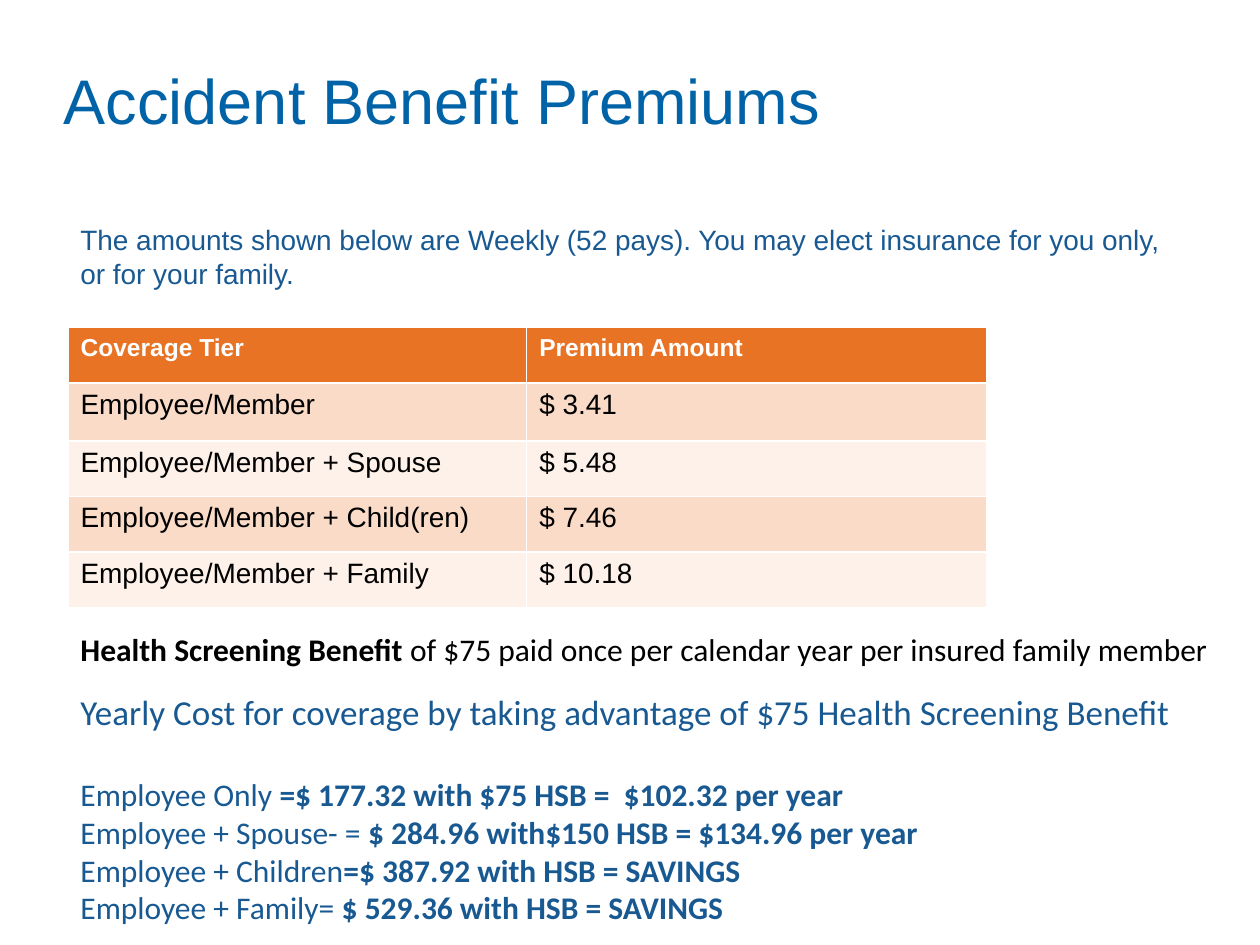
from dataclasses import dataclass

from pptx import Presentation
from pptx.dml.color import RGBColor
from pptx.enum.text import MSO_ANCHOR
from pptx.util import Inches, Pt

TOP, MIDDLE = MSO_ANCHOR.TOP, MSO_ANCHOR.MIDDLE

TITLE = RGBColor(0x00, 0x63, 0xA7)
BLUE = RGBColor(0x19, 0x59, 0x92)
BLACK = RGBColor(0x00, 0x00, 0x00)
WHITE = RGBColor(0xFF, 0xFF, 0xFF)
ORANGE = RGBColor(0xE8, 0x73, 0x25)
BANDS = (RGBColor(0xF9, 0xDB, 0xC7), RGBColor(0xFD, 0xF1, 0xE9))

WIDE, HIGH = Inches(10), Inches(7.5)
LEFT = 5.4  # shared left edge, percent of the slide width


@dataclass
class Style:
    font: str
    size: int
    color: RGBColor


@dataclass
class Line:
    runs: list[tuple[str, bool]]  # wording, bold
    style: Style
    before: float = 0
    after: float = 0


@dataclass
class Box:
    left: float  # all four in percent of the slide
    top: float
    width: float
    height: float
    lines: list[Line]
    anchor: MSO_ANCHOR = TOP


HEAD = Style("Arial", 36, TITLE)
INTRO = Style("Arial", 16, BLUE)
LABEL = Style("Arial", 14, WHITE)
CELL = Style("Arial", 16, BLACK)
NOTE = Style("Calibri", 18, BLACK)
LEAD = Style("Calibri", 20, BLUE)
COST = Style("Calibri", 18, BLUE)

TIERS = [
    ("Coverage Tier", "Premium Amount"),
    ("Employee/Member", "$ 3.41"),
    ("Employee/Member + Spouse", "$ 5.48"),
    ("Employee/Member + Child(ren)", "$ 7.46"),
    ("Employee/Member + Family", "$ 10.18"),
]
ROWS = (5.87, 6.13, 5.87, 5.87, 5.87)

COSTS = [
    ("Employee Only ", "=$ 177.32 with $75 HSB =  $102.32 per year"),
    ("Employee + Spouse- = ", "$ 284.96 with$150 HSB = $134.96 per year"),
    ("Employee + Children", "=$ 387.92 with HSB = SAVINGS"),
    ("Employee + Family= ", "$ 529.36 with HSB = SAVINGS"),
]

BOXES = [
    Box(4.1, 0, 90, 20.93,
        [Line([("Accident Benefit Premiums", False)], HEAD)], MIDDLE),
    Box(LEFT, 22.93, 88.7, 8.53, [Line([(
        "The amounts shown below are Weekly (52 pays). "
        "You may elect insurance for you only, or for your family.",
        False)], INTRO)]),
    Box(LEFT, 72.4, 92, 26.53, [
        Line([("Yearly Cost for coverage by taking advantage of "
               "$75 Health Screening Benefit", False)], LEAD),
        *[Line([(tier, False), (cost, True)], COST, 0 if i else 24.4)
          for i, (tier, cost) in enumerate(COSTS)],
    ]),
    Box(LEFT, 66, 94.6, 5.33, [Line([
        ("Health Screening Benefit ", True),
        ("of $75 paid once per calendar year per insured family member",
         False)], NOTE, after=6)]),
]


def across(share: float) -> int:
    return round(WIDE * share / 100)


def down(share: float) -> int:
    return round(HIGH * share / 100)


def format_run(run, style: Style, bold: bool) -> None:
    run.font.name = style.font
    run.font.size = Pt(style.size)
    run.font.color.rgb = style.color
    run.font.bold = bold


def draw_box(slide, box: Box) -> None:
    shape = slide.shapes.add_textbox(
        across(box.left), down(box.top), across(box.width), down(box.height))
    frame = shape.text_frame
    frame.word_wrap = True
    frame.vertical_anchor = box.anchor
    for i, line in enumerate(box.lines):
        para = frame.add_paragraph() if i else frame.paragraphs[0]
        para.space_before, para.space_after = Pt(line.before), Pt(line.after)
        for text, bold in line.runs:
            run = para.add_run()
            run.text = text
            format_run(run, line.style, bold)


def draw_table(slide) -> None:
    # The default table style supplies the white rules between cells
    table = slide.shapes.add_table(
        len(TIERS), 2, across(LEFT), down(34.67),
        across(72.9), down(sum(ROWS))).table
    for col, share in zip(table.columns, (36.4, 36.5)):
        col.width = across(share)
    for r, (row, share) in enumerate(zip(TIERS, ROWS)):
        table.rows[r].height = down(share)
        for c, text in enumerate(row):
            cell = table.cell(r, c)
            cell.fill.solid()
            cell.fill.fore_color.rgb = BANDS[(r - 1) % 2] if r else ORANGE
            cell.text_frame.text = text
            run = cell.text_frame.paragraphs[0].runs[0]
            format_run(run, CELL if r else LABEL, r == 0)


def main() -> None:
    deck = Presentation()
    deck.slide_width, deck.slide_height = WIDE, HIGH
    slide = deck.slides.add_slide(deck.slide_layouts[6])

    # Premium table
    draw_table(slide)

    # Title, introduction, yearly costs and screening note
    for box in BOXES:
        draw_box(slide, box)

    deck.save("out.pptx")


if __name__ == "__main__":
    main()
